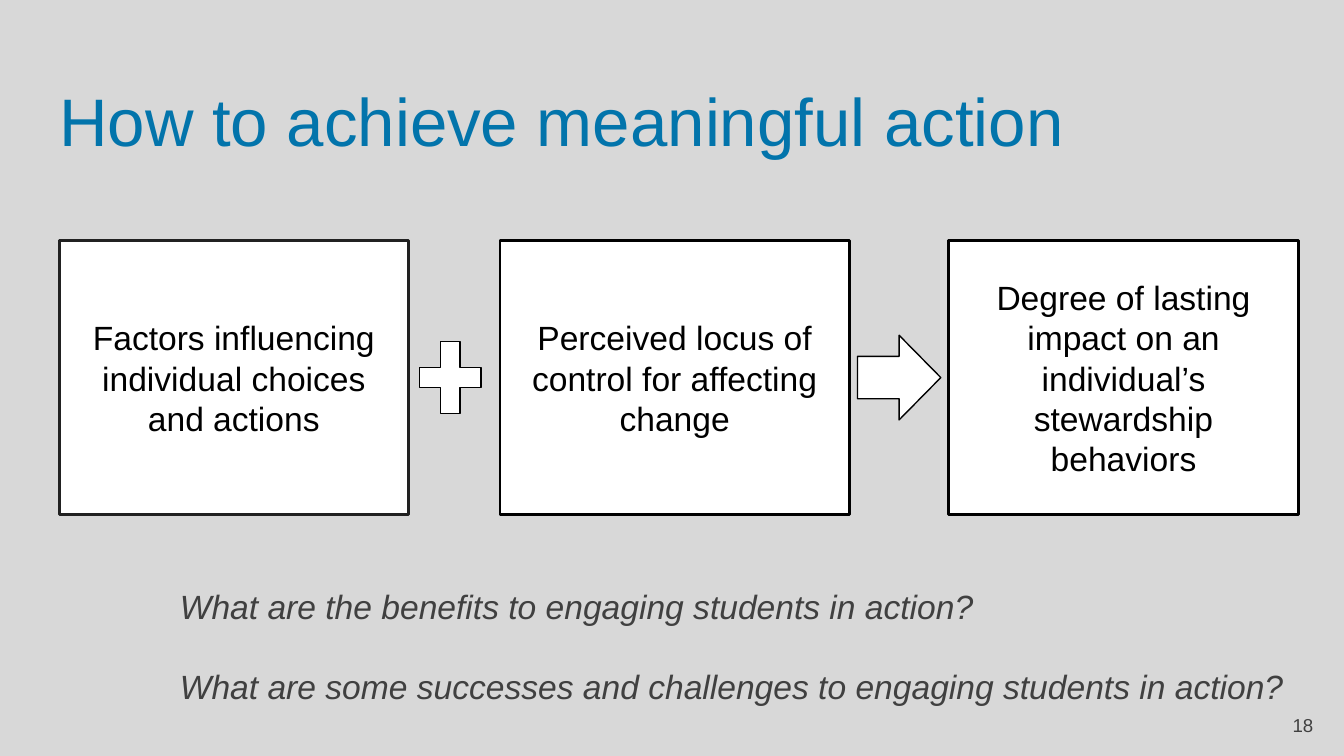
import pptx
import pptx.util
import pptx.dml.color
import pptx.enum.shapes
import pptx.enum.text

Inches = pptx.util.Inches
Pt = pptx.util.Pt
Shape = pptx.enum.shapes.MSO_SHAPE
Align = pptx.enum.text.PP_ALIGN
Anchor = pptx.enum.text.MSO_ANCHOR

# Content
TITLE = "How to achieve meaningful action"
# text, left edge, line colour
BOXES = [
    ("Factors influencing individual choices and actions", 0.44, "soft"),
    ("Perceived locus of control for affecting change", 3.72, "black"),
    ("Degree of lasting impact on an individual’s stewardship behaviors", 7.06, "black"),
]
# shape, height, distance from the box before it, adjustments
SIGNS = [
    (Shape.MATH_PLUS, 0.73, 0, [0.235]),
    (Shape.RIGHT_ARROW, 0.63, 0.06, [0.5, 0.5]),
]
ASKS = [
    "What are the benefits to engaging students in action?",
    "What are some successes and challenges to engaging students in action?",
]
NUMBER = "18"

THEME = {
    "font": "Arial",
    "back": "D8D8D8", "title": "0274AB", "white": "FFFFFF",
    "black": "000000", "soft": "212121", "grey": "404040",
    "head": 36, "body": 18, "small": 10,
}
BOX_TOP, BOX_W, BOX_H = 1.79, 2.6, 2.04
SIGN_W = 0.62


def color(name):
    return pptx.dml.color.RGBColor.from_string(THEME[name])


def write(shape, text, size, tint, align=Align.LEFT, anchor=Anchor.TOP,
          italic=False, gap=0):
    frame = shape.text_frame
    frame.text = text
    frame.word_wrap = True
    frame.auto_size = pptx.enum.text.MSO_AUTO_SIZE.NONE
    frame.vertical_anchor = anchor
    frame.margin_left = frame.margin_right = Inches(0.1)
    frame.margin_top = frame.margin_bottom = Inches(0.1)
    for i, para in enumerate(frame.paragraphs):
        para.alignment = align
        para.line_spacing = 1.0
        para.space_before = Pt(gap if i else 0)
        for run in para.runs:
            run.font.name = THEME["font"]
            run.font.size = Pt(THEME[size])
            run.font.color.rgb = color(tint)
            run.font.italic = italic


def draw(slide, kind, left, top, width, height, line, weight):
    shape = slide.shapes.add_shape(
        kind, Inches(left), Inches(top), Inches(width), Inches(height))
    shape.shadow.inherit = False
    shape.fill.solid()
    shape.fill.fore_color.rgb = color("white")
    shape.line.color.rgb = color(line)
    shape.line.width = Pt(weight)
    return shape


def main():
    # A 16:9 slide
    deck = pptx.Presentation()
    deck.slide_width, deck.slide_height = Inches(10), Inches(10 * 9 / 16)
    slide = deck.slides.add_slide(deck.slide_layouts[5])
    slide.background.fill.solid()
    slide.background.fill.fore_color.rgb = color("back")

    # Title
    title = slide.shapes.title
    title.left, title.top = Inches(0.34), Inches(0.49)
    title.width, title.height = Inches(9.32), Inches(0.63)
    write(title, TITLE, "head", "title")

    # Boxes
    for text, left, line in BOXES:
        box = draw(slide, Shape.RECTANGLE, left, BOX_TOP, BOX_W, BOX_H, line, 1.5)
        write(box, text, "body", "black", Align.CENTER, Anchor.MIDDLE)

    # Questions, one body line apart
    asks = slide.shapes.add_textbox(
        Inches(1.24), Inches(4.26), Inches(8.63), Inches(1.14))
    write(asks, "\n".join(ASKS), "body", "grey", italic=True, gap=21.5)

    # Plus and arrow, centred on the boxes' middle line
    middle = BOX_TOP + BOX_H / 2
    for (_, left, _), (kind, height, shift, adjust) in zip(BOXES, SIGNS):
        sign = draw(slide, kind, left + BOX_W + shift, middle - height / 2,
                    SIGN_W, height, "black", 0.75)
        for i, value in enumerate(adjust):
            sign.adjustments[i] = value

    # Slide number
    number = slide.shapes.add_textbox(
        Inches(9.27), Inches(5.18), Inches(0.6), Inches(0.43))
    write(number, NUMBER, "small", "grey", Align.RIGHT, Anchor.MIDDLE)

    deck.save("out.pptx")


if __name__ == "__main__":
    main()
